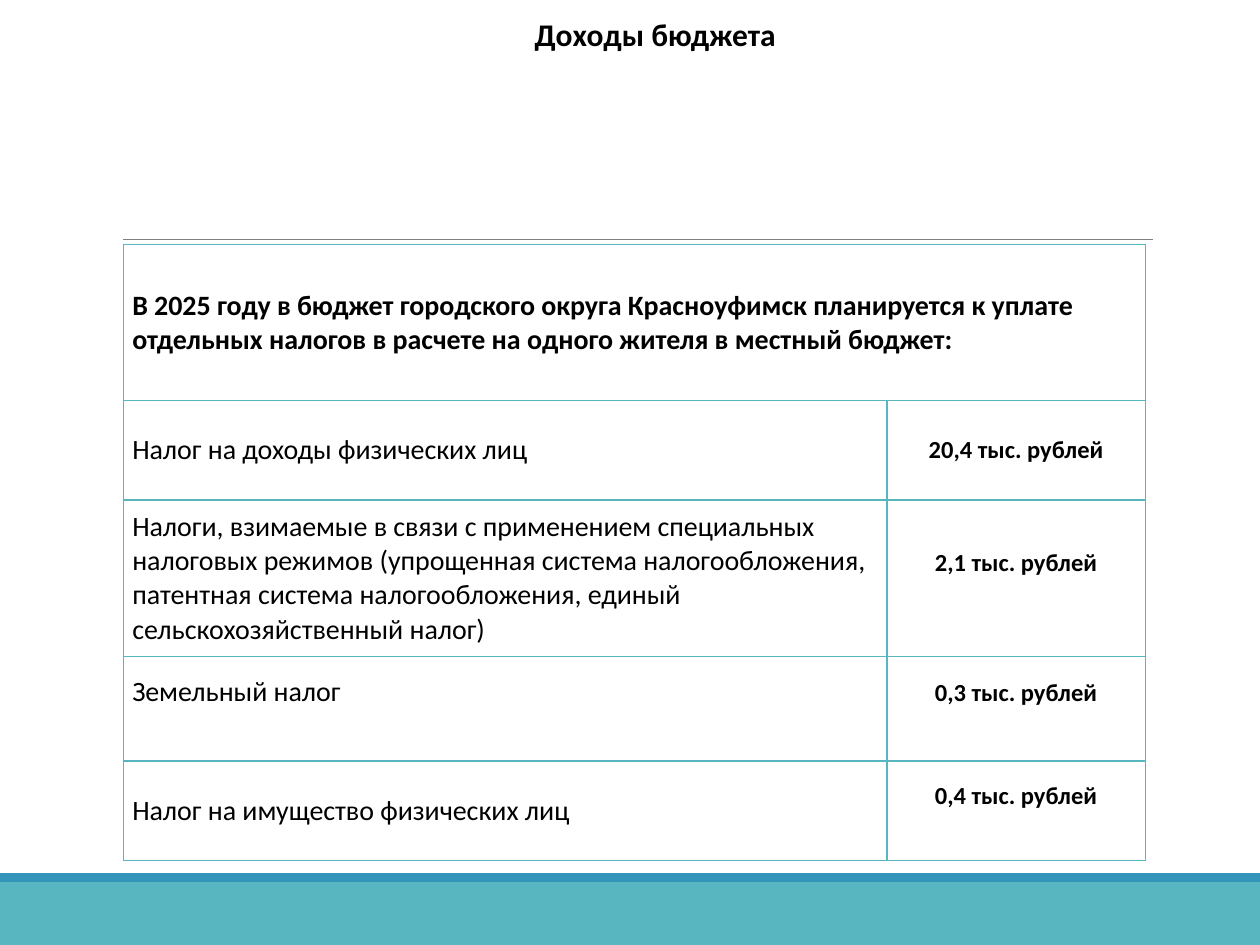
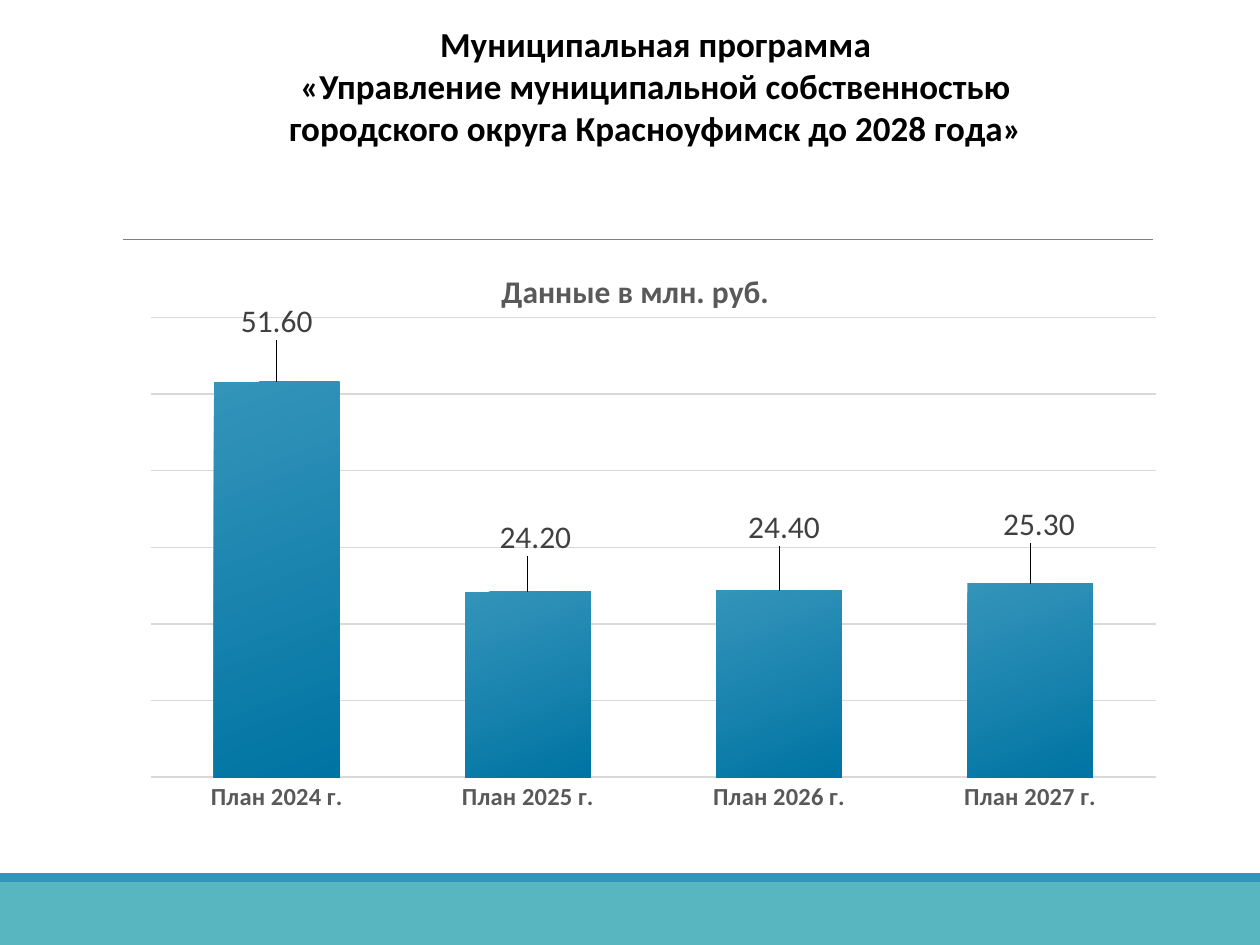
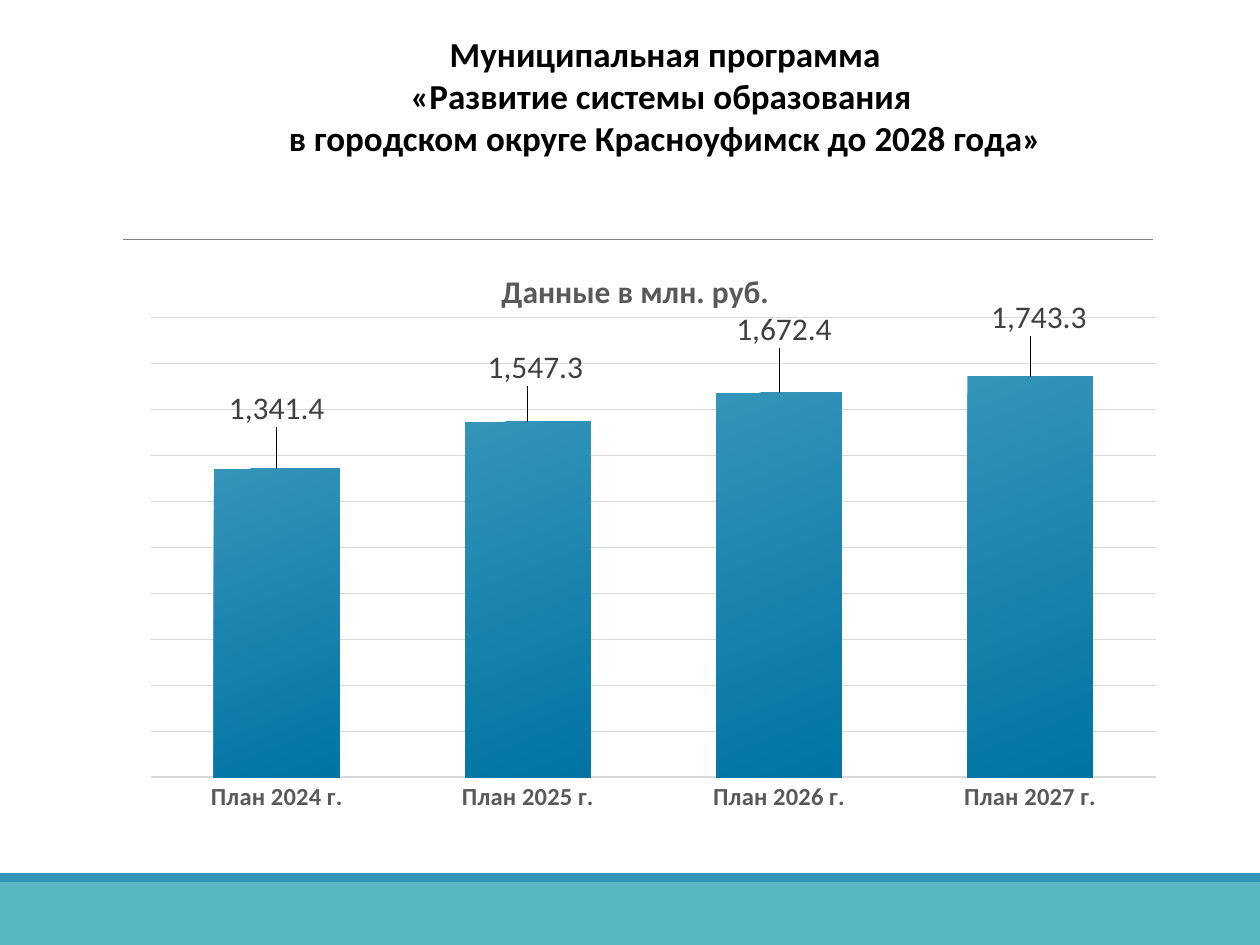
import dataclasses
import typing

import lxml.etree
import pptx
import pptx.chart.data
import pptx.dml.color
import pptx.enum.chart
import pptx.enum.shapes
import pptx.enum.text
import pptx.oxml.ns
import pptx.util

# Shared look: 100 px to the inch
EMU_PER_PX = 9144
FONT = "Calibri"
CHART_FONT = "Cambria"
BLACK, WHITE = "000000", "FFFFFF"
TEAL, BLUE, DEEP_BLUE = "58B6C0", "3494BA", "0074A3"
RULE_GRAY, GRID_GRAY, AXIS_GRAY, LABEL_GRAY = "808080", "D9D9D9", "595959", "404040"
LEFT = pptx.enum.text.PP_ALIGN.LEFT
CENTER = pptx.enum.text.PP_ALIGN.CENTER
TOP = pptx.enum.text.MSO_ANCHOR.TOP
MIDDLE = pptx.enum.text.MSO_ANCHOR.MIDDLE


@dataclasses.dataclass(frozen=True)
class Frame:
    left: int
    top: int
    width: int
    height: int

    def emu(self) -> list[pptx.util.Emu]:
        return [px(value) for value in dataclasses.astuple(self)]


@dataclasses.dataclass(frozen=True)
class Band:
    frame: Frame
    fill: str


@dataclasses.dataclass(frozen=True)
class Title:
    text: str
    frame: Frame
    size: int = 20
    anchor: typing.Any = TOP


@dataclasses.dataclass(frozen=True)
class TaxRow:
    name: str
    amount: str
    height: int
    name_lift: int = 0    # bottom cell margin, raises the text
    amount_lift: int = 0


@dataclasses.dataclass(frozen=True)
class ProgramChart:
    title: Title
    values: tuple[float, ...]
    number_format: str
    maximum: int
    step: int


PAGE = Frame(0, 0, 1000, 750)
BANDS = (Band(Frame(0, 700, 1000, 50), TEAL), Band(Frame(0, 693, 1000, 7), BLUE))
RULE_Y, RULE_START, RULE_END = 190, 98, 915

# Income table
INCOME_TITLE = Title("Доходы бюджета", Frame(201, 7, 638, 40), 18)
TABLE_FRAME = Frame(98, 194, 811, 488)
COLUMN_WIDTHS = (606, 205)
HEADING_HEIGHT = 124
HEADING = ("В 2025 году в бюджет городского округа Красноуфимск планируется к уплате "
           "отдельных налогов в расчете на одного жителя в местный бюджет:")
TAX_ROWS = (
    TaxRow("Налог на доходы физических лиц", "20,4 тыс. рублей", 79),
    TaxRow("Налоги, взимаемые в связи с применением специальных налоговых режимов "
           "(упрощенная система налогообложения, патентная система налогообложения, "
           "единый сельскохозяйственный налог)", "2,1 тыс. рублей", 124, amount_lift=24),
    TaxRow("Земельный налог", "0,3 тыс. рублей", 83, name_lift=27, amount_lift=24),
    TaxRow("Налог на имущество физических лиц", "0,4 тыс. рублей", 79, amount_lift=24),
)

# Program charts
CHART_FRAME = Frame(91, 194, 827, 488)
PLOT_FRAME = Frame(29, 58, 798, 365)
CHART_TITLE = "Данные в млн. руб."
YEARS = tuple(f"План {year} г." for year in range(2024, 2028))
LABEL_SHIFTS = ((0, -29), (6, -24), (4, -31), (7, -28))
PROGRAMS = (
    ProgramChart(
        Title("Муниципальная программа \n«Управление муниципальной собственностью \n"
              "городского округа Красноуфимск до 2028 года» ",
              Frame(130, 12, 787, 111), anchor=MIDDLE),
        (51.6, 24.2, 24.4, 25.3), "#,##0.00", 60, 10),
    ProgramChart(
        Title("Муниципальная программа\n«Развитие системы образования \n"
              "в городском округе Красноуфимск до 2028 года»",
              Frame(138, 21, 780, 111)),
        (1341.4, 1547.3, 1672.4, 1743.3), "#,##0.0", 2000, 200),
)


# Helpers
def px(value: int) -> pptx.util.Emu:
    return pptx.util.Emu(value * EMU_PER_PX)


def rgb(color: str) -> pptx.dml.color.RGBColor:
    return pptx.dml.color.RGBColor.from_string(color)


def add_element(parent, tag: str, **attributes: str):
    return lxml.etree.SubElement(parent, pptx.oxml.ns.qn(tag), attributes)


def format_font(font, *, size: int, color: str = BLACK, bold: bool = False,
                name: str = FONT) -> None:
    font.name = name
    font.size = pptx.util.Pt(size)
    font.bold = bold
    font.color.rgb = rgb(color)


def write_text(text_frame, text: str, *, align=LEFT, **font_format) -> None:
    for index, line in enumerate(text.split("\n")):
        para = text_frame.add_paragraph() if index else text_frame.paragraphs[0]
        para.alignment = align
        span = para.add_run()
        span.text = line
        format_font(span.font, **font_format)


def format_line(line, color: str, width: float) -> None:
    line.color.rgb = rgb(color)
    line.width = pptx.util.Pt(width)


# Page with rule, bands and title
def add_page(deck, title: Title):
    page = deck.slides.add_slide(deck.slide_layouts[5])
    page.background.fill.solid()
    page.background.fill.fore_color.rgb = rgb(WHITE)

    rule = page.shapes.add_connector(
        pptx.enum.shapes.MSO_CONNECTOR.STRAIGHT,
        px(RULE_START), px(RULE_Y), px(RULE_END), px(RULE_Y))
    format_line(rule.line, RULE_GRAY, 0.5)
    add_element(rule._element.spPr, "a:effectLst")

    for band in BANDS:
        box = page.shapes.add_shape(
            pptx.enum.shapes.MSO_SHAPE.RECTANGLE, *band.frame.emu())
        box.shadow.inherit = False
        box.fill.solid()
        box.fill.fore_color.rgb = rgb(band.fill)
        box.line.fill.background()

    heading = page.shapes.title
    heading.left, heading.top, heading.width, heading.height = title.frame.emu()
    heading.text_frame.word_wrap = True
    heading.text_frame.auto_size = pptx.enum.text.MSO_AUTO_SIZE.SHAPE_TO_FIT_TEXT
    heading.text_frame.vertical_anchor = title.anchor
    write_text(heading.text_frame, title.text, align=CENTER, size=title.size, bold=True)
    return page


# Table
def format_cell(cell, lift: int = 0) -> None:
    cell.vertical_anchor = MIDDLE
    cell.margin_left = cell.margin_right = px(7)
    cell.margin_top, cell.margin_bottom = px(0), px(lift)
    properties = cell._tc.get_or_add_tcPr()
    for side in ("a:lnL", "a:lnR", "a:lnT", "a:lnB"):
        border = add_element(properties, side, w=str(pptx.util.Pt(1)))
        add_element(add_element(border, "a:solidFill"), "a:srgbClr", val=TEAL)
    cell.fill.background()


def add_income_table(page) -> None:
    table = page.shapes.add_table(
        len(TAX_ROWS) + 1, len(COLUMN_WIDTHS), *TABLE_FRAME.emu()).table
    table.first_row = table.horz_banding = False
    for column, width in zip(table.columns, COLUMN_WIDTHS):
        column.width = px(width)

    table.rows[0].height = px(HEADING_HEIGHT)
    for cell in table.rows[0].cells:
        format_cell(cell)
    table.cell(0, 0).merge(table.cell(0, 1))
    write_text(table.cell(0, 0).text_frame, HEADING, size=16, bold=True)

    for index, tax in enumerate(TAX_ROWS, start=1):
        table.rows[index].height = px(tax.height)
        name, amount = table.rows[index].cells
        format_cell(name, tax.name_lift)
        format_cell(amount, tax.amount_lift)
        write_text(name.text_frame, tax.name, size=16)
        write_text(amount.text_frame, tax.amount, align=CENTER, size=14, bold=True)


# Charts
def make_layout(**settings: typing.Any):
    layout = lxml.etree.Element(pptx.oxml.ns.qn("c:layout"))
    manual = add_element(layout, "c:manualLayout")
    for name, value in settings.items():
        add_element(manual, f"c:{name}", val=str(value))
    return layout


def place_plot(chart) -> None:
    plot_area = chart._chartSpace.find(".//" + pptx.oxml.ns.qn("c:plotArea"))
    for old_layout in plot_area.findall(pptx.oxml.ns.qn("c:layout")):
        plot_area.remove(old_layout)
    plot_area.insert(0, make_layout(
        layoutTarget="inner", xMode="edge", yMode="edge",
        x=PLOT_FRAME.left / CHART_FRAME.width, y=PLOT_FRAME.top / CHART_FRAME.height,
        w=PLOT_FRAME.width / CHART_FRAME.width,
        h=PLOT_FRAME.height / CHART_FRAME.height))


def format_labels(series, number_format: str) -> None:
    labels = series.data_labels
    labels.show_value = True
    labels.number_format = number_format
    labels.number_format_is_linked = False
    labels.position = pptx.enum.chart.XL_LABEL_POSITION.OUTSIDE_END
    format_font(labels.font, size=18, color=LABEL_GRAY)
    for index in range(len(YEARS)):
        label = series.points[index].data_label
        label.position = pptx.enum.chart.XL_LABEL_POSITION.OUTSIDE_END
        format_font(label.font, size=18, color=LABEL_GRAY)
    label_elements = series._element.iter(pptx.oxml.ns.qn("c:dLbl"))
    for element, (shift_x, shift_y) in zip(list(label_elements), LABEL_SHIFTS):
        element.insert(1, make_layout(
            x=shift_x / CHART_FRAME.width, y=shift_y / CHART_FRAME.height))


def add_program_chart(page, program: ProgramChart) -> None:
    data = pptx.chart.data.CategoryChartData(number_format=program.number_format)
    data.categories = YEARS
    data.add_series("Series 1", program.values)
    chart = page.shapes.add_chart(
        pptx.enum.chart.XL_CHART_TYPE.COLUMN_CLUSTERED, *CHART_FRAME.emu(), data).chart
    format_font(chart.font, size=10, name=CHART_FONT)
    chart.has_legend = False
    chart.has_title = True
    write_text(chart.chart_title.text_frame, CHART_TITLE, align=CENTER,
               size=18, color=AXIS_GRAY, bold=True)
    chart.chart_title.include_in_layout = False
    place_plot(chart)

    years = chart.category_axis
    years.major_tick_mark = pptx.enum.chart.XL_TICK_MARK.NONE
    format_line(years.format.line, GRID_GRAY, 1)
    format_font(years.tick_labels.font, size=14, color=AXIS_GRAY, bold=True)

    amounts = chart.value_axis
    amounts.minimum_scale, amounts.maximum_scale = 0, program.maximum
    amounts.major_unit = program.step
    amounts.has_major_gridlines = True
    format_line(amounts.major_gridlines.format.line, GRID_GRAY, 0.75)
    amounts.visible = False

    plot = chart.plots[0]
    plot.vary_by_categories = False
    plot.gap_width, plot.overlap = 100, -24
    series = plot.series[0]
    fill = series.format.fill
    fill.gradient()
    fill.gradient_angle = 291
    for stop, color in zip(fill.gradient_stops, (BLUE, DEEP_BLUE)):
        stop.color.rgb = rgb(color)
    format_labels(series, program.number_format)


def main() -> None:
    deck = pptx.Presentation()
    deck.slide_width, deck.slide_height = px(PAGE.width), px(PAGE.height)
    add_income_table(add_page(deck, INCOME_TITLE))
    for program in PROGRAMS:
        add_program_chart(add_page(deck, program.title), program)
    deck.save("out.pptx")


if __name__ == "__main__":
    main()
